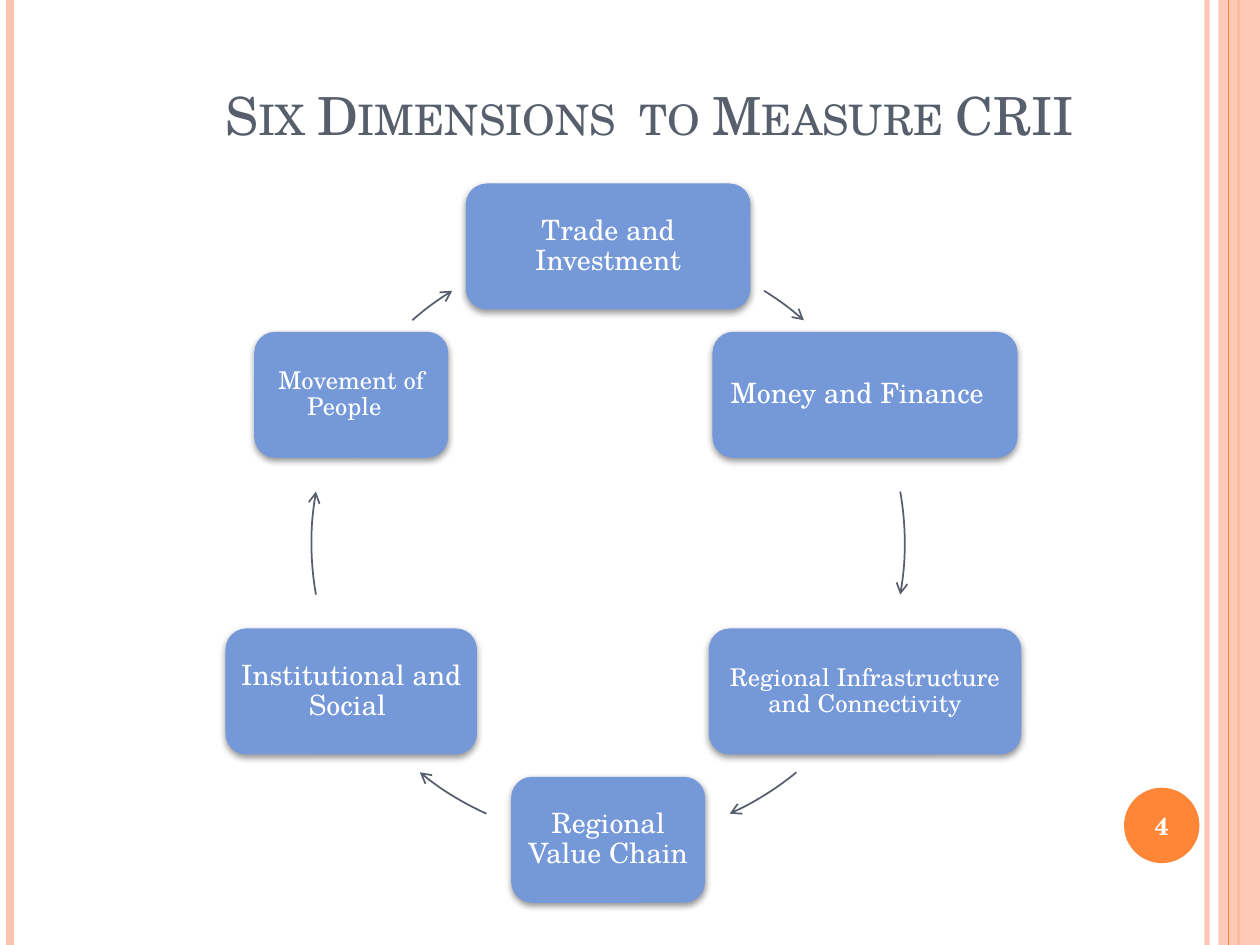
from math import cos, radians, sin

from lxml import etree
from pptx import Presentation
from pptx.dml.color import RGBColor
from pptx.enum.shapes import MSO_CONNECTOR, MSO_SHAPE
from pptx.enum.text import MSO_ANCHOR, MSO_AUTO_SIZE, PP_ALIGN
from pptx.oxml.ns import qn
from pptx.util import Cm, Pt

ARC, OVAL, RECT, ROUND = (MSO_SHAPE.ARC, MSO_SHAPE.OVAL,
                          MSO_SHAPE.RECTANGLE, MSO_SHAPE.ROUNDED_RECTANGLE)
LINE = MSO_CONNECTOR.STRAIGHT
CENTER = PP_ALIGN.CENTER
MIDDLE = MSO_ANCHOR.MIDDLE
FIXED = MSO_AUTO_SIZE.NONE

FONT = "TeX Gyre Schola"
PEACH, ORANGE, BLUE, SLATE, WHITE = "FEC3AE", "FE8637", "7598D9", "575F6D", "FFFFFF"
WIDE, HIGH = 25.4, 19.05
MID_X, MID_Y, RADIUS = 12.26, 10.95, 5.98
BOX_H = 2.54


def paint(fmt, color, alpha=100):
    fmt.solid()
    fmt.fore_color.rgb = RGBColor.from_string(color)
    if alpha < 100:
        tint = fmt._xPr.find(qn("a:solidFill"))[0]
        etree.SubElement(tint, qn("a:alpha")).set("val", str(alpha * 1000))


def write(shape, text, size=16, color=WHITE, bold=False, space=1, pad=0.18, small=False):
    frame = shape.text_frame
    frame.word_wrap = True
    frame.auto_size = FIXED
    frame.vertical_anchor = MIDDLE
    frame.margin_left = frame.margin_right = Cm(pad)
    frame.margin_top = frame.margin_bottom = Cm(pad)
    para = frame.paragraphs[0]
    para.alignment = CENTER
    para.line_spacing = space
    run = para.add_run()
    run.text = text
    run.font.name = FONT
    run.font.size = Pt(size)
    run.font.bold = bold
    run.font.color.rgb = RGBColor.from_string(color)
    if small:
        run._r.get_or_add_rPr().set("cap", "small")


class Deck:
    def __init__(self):
        self.prs = Presentation()
        self.prs.slide_width, self.prs.slide_height = Cm(WIDE), Cm(HIGH)
        self.slide = self.prs.slides.add_slide(self.prs.slide_layouts[5])

    def title(self, text, x, y, w, h):
        head = self.slide.shapes.title
        head.left, head.top, head.width, head.height = Cm(x), Cm(y), Cm(w), Cm(h)
        write(head, text, size=30, color=SLATE, small=True)

    def stripe(self, x, width, color, alpha=100):
        rule = self.slide.shapes.add_connector(LINE, Cm(x), 0, Cm(x), Cm(HIGH))
        rule.line.width = Pt(width)
        paint(rule.line.fill, color, alpha)
        etree.SubElement(rule._element.spPr, qn("a:effectLst"))

    def shape(self, kind, x, y, w, h, color, alpha=100):
        form = self.slide.shapes.add_shape(kind, Cm(x), Cm(y), Cm(w), Cm(h))
        form.shadow.inherit = False
        form.line.fill.background()
        paint(form.fill, color, alpha)
        return form

    def node(self, text, angle, w, size):
        x = MID_X + RADIUS * cos(radians(angle)) - w / 2
        y = MID_Y + RADIUS * sin(radians(angle)) - BOX_H / 2
        box = self.shape(ROUND, x, y, w, BOX_H, BLUE)
        glow = etree.SubElement(box._element.spPr.find(qn("a:effectLst")),
                                qn("a:outerShdw"), blurRad=str(Pt(4)),
                                dist=str(Pt(1.6)), dir="5400000", rotWithShape="0")
        tint = etree.SubElement(glow, qn("a:srgbClr"), val="000000")
        etree.SubElement(tint, qn("a:alpha"), val="42000")
        write(box, text, size=size, space=0.9)

    def arrow(self, start, end):
        side = 2 * RADIUS
        arc = self.slide.shapes.add_shape(ARC, Cm(MID_X - RADIUS), Cm(MID_Y - RADIUS),
                                          Cm(side), Cm(side))
        arc.shadow.inherit = False
        arc.fill.background()
        for i, angle in enumerate((start, end)):
            arc.adjustments[i] = angle * 0.6
        arc.line.width = Pt(1)
        paint(arc.line.fill, SLATE)
        etree.SubElement(arc.line._get_or_add_ln(), qn("a:tailEnd"), type="arrow")


def main():
    deck = Deck()
    deck.stripe(24.33, 3, PEACH, 93)
    deck.stripe(0.2, 4.5, PEACH)
    deck.stripe(24.97, 1.5, ORANGE)
    deck.shape(RECT, 24.56, 0, 0.84, HIGH, PEACH, 87)
    deck.stripe(24.77, 0.75, ORANGE)
    badge = deck.shape(OVAL, 22.66, 15.88, 1.52, 1.52, ORANGE)
    write(badge, "4", size=14, bold=True, pad=0)
    deck.title("Six Dimensions  to Measure CRII", 2.62, 0.28, 20.96, 4.04)

    ring = [
        ("Trade and Investment", 5.74, 16, 301.7, 311.3),
        ("Money and Finance  ", 6.15, 16, 350, 10),
        ("Regional Infrastructure and Connectivity", 6.3, 14, 50.6, 65.8),
        ("Regional Value Chain ", 3.91, 16, 114.2, 129.4),
        ("Institutional and Social ", 5.07, 16, 170, 190),
        ("Movement of People  ", 3.91, 14, 228.7, 238.3),
    ]
    for i, (text, w, size, start, end) in enumerate(ring):
        deck.node(text, 60 * i - 90, w, size)
        deck.arrow(start, end)
    deck.prs.save("out.pptx")


if __name__ == "__main__":
    main()
